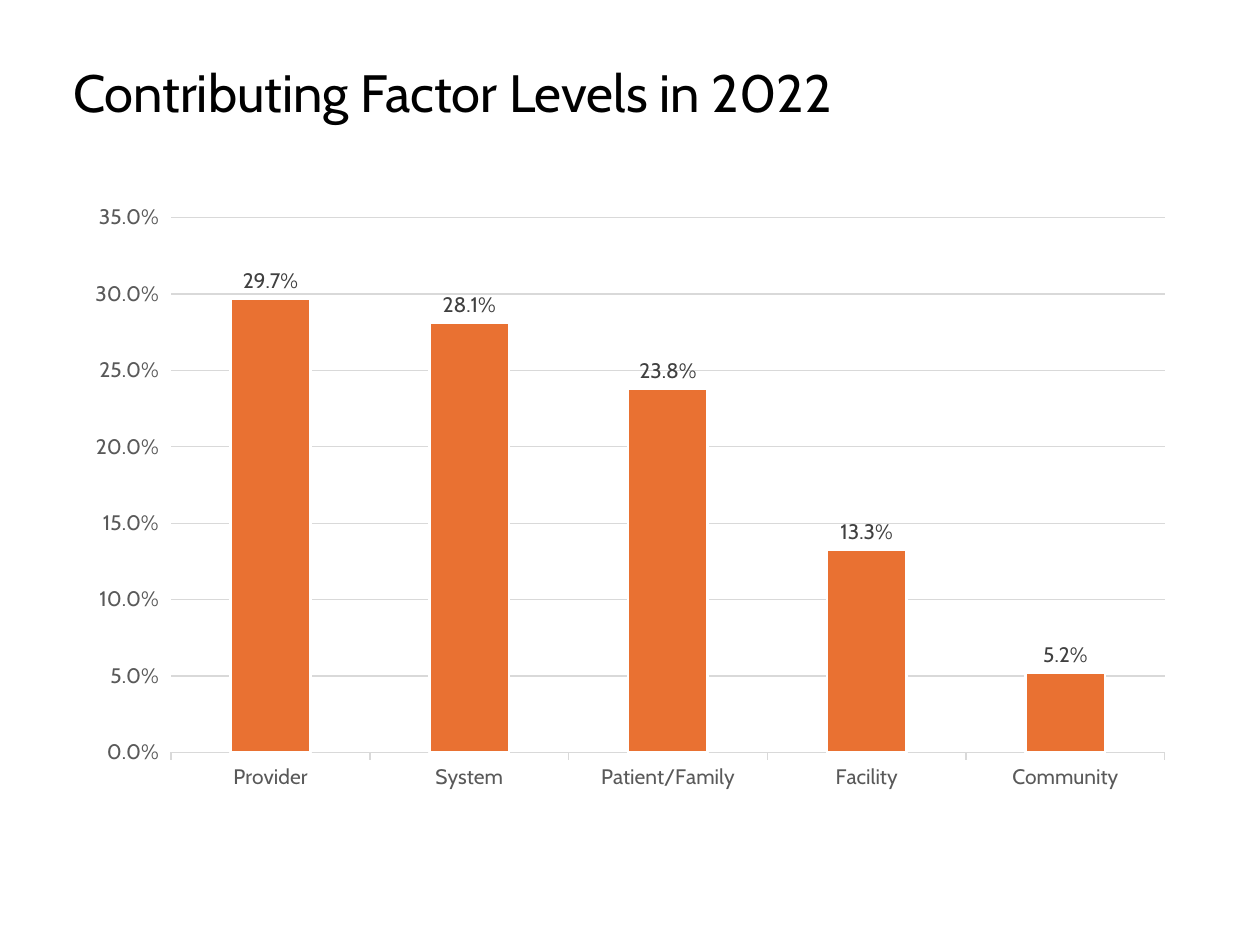
from dataclasses import dataclass

from pptx import Presentation, util as u
from pptx.chart.data import CategoryChartData
from pptx.dml.color import RGBColor
from pptx.enum import chart as ch, text as tx


@dataclass(frozen=True)
class Theme:
    face: str = "Cabin"
    title: str = "000000"
    axis: str = "595959"
    label: str = "404040"
    grid: str = "D9D9D9"
    bar: str = "E97132"
    edge: str = "FFFFFF"
    head: int = 30
    base: int = 10
    note: int = 12


@dataclass(frozen=True)
class Box:
    x: int
    y: int
    w: int
    h: int

    def emu(self) -> tuple:
        return tuple(px(n) for n in (self.x, self.y, self.w, self.h))


@dataclass(frozen=True)
class Level:
    name: str
    share: float


THEME = Theme()
PCT = "0.0%"
LEVELS = (
    Level("Provider", 0.297),
    Level("System", 0.281),
    Level("Patient/Family", 0.238),
    Level("Facility", 0.133),
    Level("Community", 0.052),
)


def px(n: int) -> int:
    return round(n * 914400 / 126)


def style(font, size: int, color: str) -> None:
    font.name = THEME.face
    font.size = u.Pt(size)
    font.bold = False
    font.color.rgb = RGBColor.from_string(color)


def stroke(line, color: str, width: float) -> None:
    line.color.rgb = RGBColor.from_string(color)
    line.width = u.Pt(width)


def add_title(slide, box: Box, words: str) -> None:
    frame = slide.shapes.add_textbox(*box.emu()).text_frame
    frame.word_wrap = True
    frame.vertical_anchor = tx.MSO_ANCHOR.MIDDLE
    frame.margin_left = 0
    frame.margin_top = frame.margin_right = frame.margin_bottom = u.Inches(0.1)
    para = frame.paragraphs[0]
    para.line_spacing = 0.9
    run = para.add_run()
    run.text = words
    style(run.font, THEME.head, THEME.title)


def add_bars(slide, box: Box, levels: tuple[Level, ...]) -> None:
    data = CategoryChartData(number_format=PCT)
    data.categories = [v.name for v in levels]
    data.add_series("Series 1", [v.share for v in levels])
    kind = ch.XL_CHART_TYPE.COLUMN_CLUSTERED
    chart = slide.shapes.add_chart(kind, *box.emu(), data).chart
    chart.has_legend = False
    chart.has_title = False
    style(chart.font, THEME.base, THEME.title)

    for axis in (chart.category_axis, chart.value_axis):
        axis.major_tick_mark = ch.XL_TICK_MARK.OUTSIDE
        axis.minor_tick_mark = ch.XL_TICK_MARK.NONE
        style(axis.tick_labels.font, THEME.note, THEME.axis)
    stroke(chart.category_axis.format.line, THEME.grid, 0.75)

    scale = chart.value_axis
    scale.minimum_scale = 0
    scale.maximum_scale = 0.35
    scale.major_unit = 0.05
    scale.format.line.fill.background()
    scale.tick_labels.number_format = PCT
    scale.tick_labels.number_format_is_linked = False
    stroke(scale.major_gridlines.format.line, THEME.grid, 0.75)

    plot = chart.plots[0]
    plot.gap_width = 150
    plot.vary_by_categories = False
    bars = plot.series[0]
    bars.format.fill.solid()
    bars.format.fill.fore_color.rgb = RGBColor.from_string(THEME.bar)
    stroke(bars.format.line, THEME.edge, 1.5)

    labels = bars.data_labels
    labels.show_value = True
    labels.number_format = PCT
    labels.number_format_is_linked = False
    labels.position = ch.XL_LABEL_POSITION.OUTSIDE_END
    style(labels.font, THEME.note, THEME.label)


def main() -> None:
    deck = Presentation()
    deck.slide_width, deck.slide_height = px(1260), px(945)
    slide = deck.slides.add_slide(deck.slide_layouts[6])
    add_title(slide, Box(73, 44, 903, 103), "Contributing Factor Levels in 2022")
    add_bars(slide, Box(73, 193, 1114, 609), LEVELS)
    deck.save("out.pptx")


if __name__ == "__main__":
    main()
